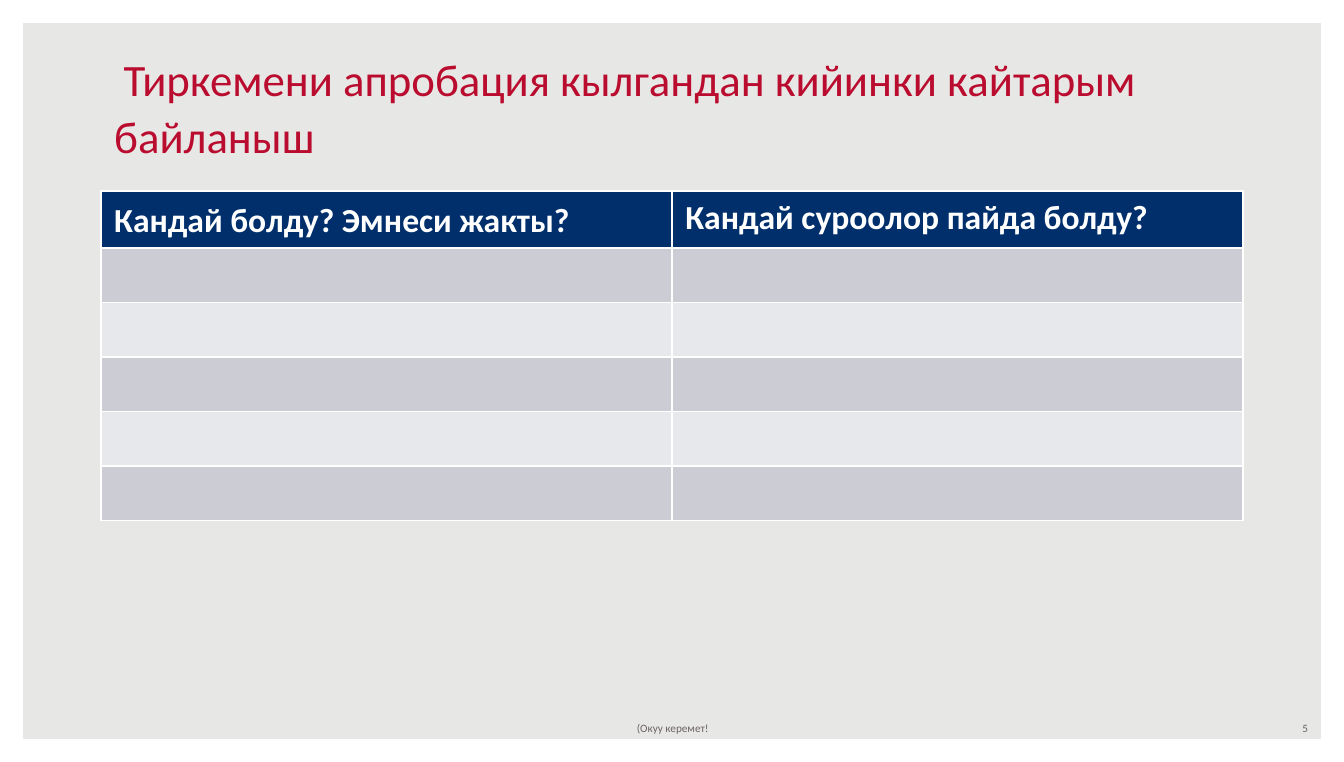
"""Build a feedback slide with a two-column table to fill in."""
import pptx
import pptx.util
import pptx.dml.color
import pptx.enum.shapes
import pptx.enum.text

Inches = pptx.util.Inches
ALIGN = pptx.enum.text.PP_ALIGN
ANCHOR = pptx.enum.text.MSO_ANCHOR
COLORS = {
    "back": "E7E7E5",
    "white": "FFFFFF",
    "red": "BA0C2F",
    "navy": "002F6C",
    "dark": "CCCDD4",
    "light": "E7E8EB",
    "gray": "6C6463",
}
HEADS = ["Кандай болду? Эмнеси жакты?", "Кандай суроолор пайда болду?"]
ROWS = 6


def paint(fill, color):
    fill.solid()
    fill.fore_color.rgb = pptx.dml.color.RGBColor.from_string(COLORS[color])


def write(frame, text, size, color, bold=False, align=ALIGN.LEFT,
          line=None, after=None, indent=None):
    para = frame.paragraphs[0]
    para.alignment = align
    if line:
        para.line_spacing = line
    if after:
        para.space_after = pptx.util.Pt(after)
    if indent:
        para._p.get_or_add_pPr().set("indent", str(Inches(indent)))
    run = para.add_run()
    run.text = text
    run.font.name = "Calibri"
    run.font.size = pptx.util.Pt(size)
    run.font.bold = bold
    paint(run.font.fill, color)


def add_frame(slide, wide, high):
    kind = pptx.enum.shapes.MSO_SHAPE.FRAME
    shape = slide.shapes.add_shape(kind, 0, 0, wide, high)
    shape.adjustments[0] = 0.03
    shape.shadow.inherit = False
    paint(shape.fill, "white")
    shape.line.fill.background()


def add_title(slide, text):
    title = slide.shapes.title
    title.left, title.top = Inches(0.75), Inches(-0.12)
    title.width, title.height = Inches(8.5), Inches(1.38)
    frame = title.text_frame
    frame.word_wrap = True
    frame.auto_size = pptx.enum.text.MSO_AUTO_SIZE.NONE
    frame.vertical_anchor = ANCHOR.BOTTOM
    write(frame, text, 24, "red", line=1.07, after=8, indent=0.07)


def add_grid(slide):
    grid = slide.shapes.add_table(
        ROWS, len(HEADS), Inches(0.75), Inches(1.42), Inches(8.5), Inches(2.43)
    ).table
    for col, head in enumerate(HEADS):
        for row in range(ROWS):
            shade = "dark" if row % 2 else "light"
            paint(grid.cell(row, col).fill, shade if row else "navy")
        style = {} if col else {"line": 1.07, "after": 8}
        write(grid.cell(0, col).text_frame, head, 18, "white", bold=True, **style)


def add_note(slide, text, left, width, align):
    box = slide.shapes.add_textbox(
        Inches(left), Inches(5.32), Inches(width), Inches(0.2))
    frame = box.text_frame
    frame.word_wrap = True
    frame.vertical_anchor = ANCHOR.MIDDLE
    write(frame, text, 6, "gray", align=align)


def main():
    deck = pptx.Presentation()
    deck.slide_width, deck.slide_height = Inches(10), Inches(5.67)
    slide = deck.slides.add_slide(deck.slide_layouts[5])
    paint(slide.background.fill, "back")
    add_frame(slide, deck.slide_width, deck.slide_height)
    add_title(slide, "Тиркемени апробация кылгандан кийинки кайтарым байланыш")
    add_grid(slide)
    add_note(slide, "(Окуу керемет!", 3.42, 3.17, ALIGN.CENTER)
    add_note(slide, "5", 7.5, 2.33, ALIGN.RIGHT)
    deck.save("out.pptx")


if __name__ == "__main__":
    main()
